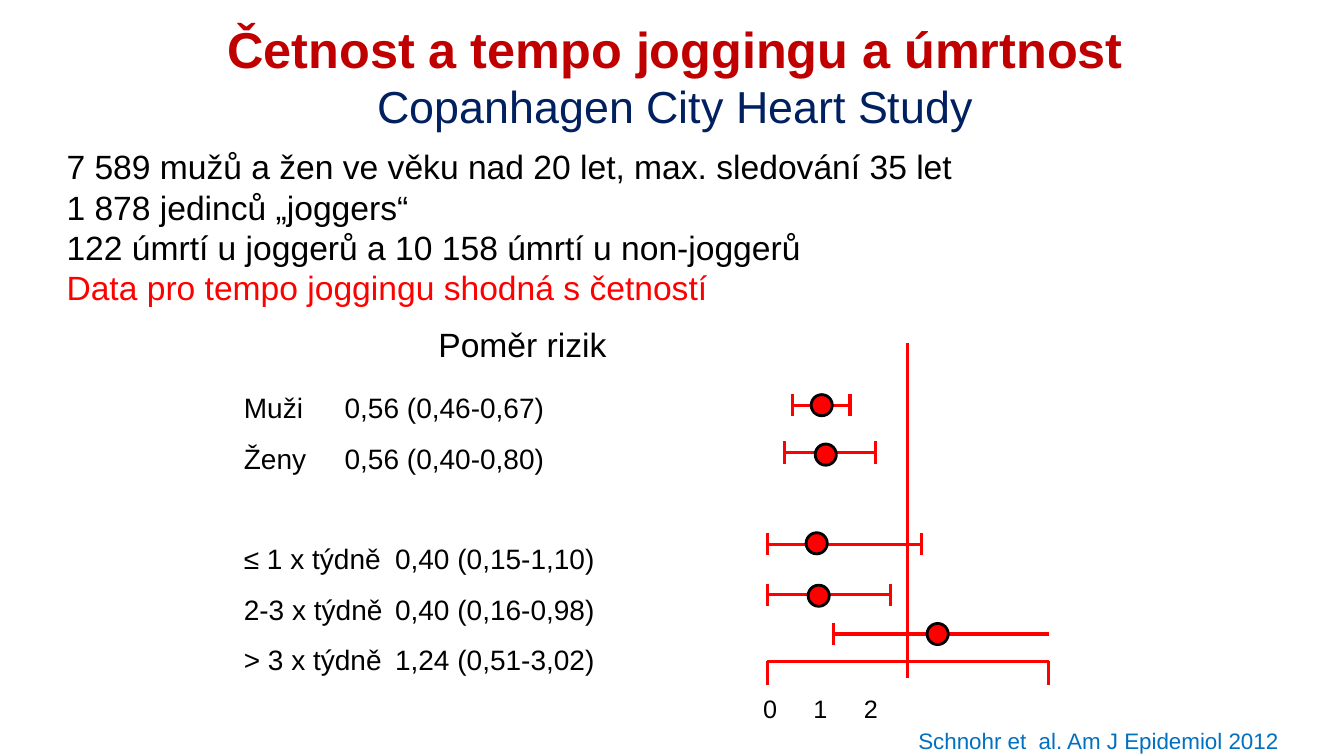
from lxml import etree
from pptx import Presentation
from pptx import util as u
from pptx.dml.color import RGBColor
from pptx.enum import shapes, text
from pptx.oxml import ns

COLOURS = {"title": "C00000", "subtitle": "002060", "body": "000000",
           "accent": "FF0000", "source": "0070C0"}
FONT = "Arial"

FACTS = [
    ("7 589 mužů a žen ve věku nad 20 let, max. sledování 35 let", "body"),
    ("1 878 jedinců „joggers“", "body"),
    ("122 úmrtí u joggerů a 10 158 úmrtí u non-joggerů", "body"),
    ("Data pro tempo joggingu shodná s četností", "accent"),
]
# label, risk ratio, space before in points
RISKS = [
    ("Muži", "0,56 (0,46-0,67)", 0),
    ("Ženy", "0,56 (0,40-0,80)", 0),
    ("≤ 1 x týdně", "0,40 (0,15-1,10)", 36),
    ("2-3 x týdně", "0,40 (0,16-0,98)", 0),
    ("> 3 x týdně", "1,24 (0,51-3,02)", 0),
]
# bar start, bar end, bar height, dot centre x and y, capped at the right end
INTERVALS = [
    (0.25, 0.82, 0.62, 0.54, 0.62, True),
    (0.17, 1.07, 1.09, 0.58, 1.11, True),
    (0, 1.53, 2.00, 0.49, 1.99, True),
    (0, 1.22, 2.50, 0.51, 2.51, True),
    (0.66, 2.79, 2.89, 1.69, 2.89, False),
]
AXIS_WIDTH, AXIS_Y = 2.79, 3.16
CAP, DOT = 0.11, 0.21


def colour(name):
    return RGBColor.from_string(COLOURS[name])


def place(shape, left, top, width, height):
    shape.left, shape.top = u.Inches(left), u.Inches(top)
    shape.width, shape.height = u.Inches(width), u.Inches(height)


def add_span(para, words, size, ink="body", bold=False):
    span = para.add_run()
    span.text = words
    span.font.name, span.font.size, span.font.bold = FONT, u.Pt(size), bold
    span.font.color.rgb = colour(ink)


def write(frame, words, size, ink="body", first=False, before=0, spacing=1.0, tabs=()):
    """Add one unbulleted paragraph with its tab stops in inches."""
    para = frame.paragraphs[0] if first else frame.add_paragraph()
    props = para._p.get_or_add_pPr()
    props.set("marL", "0")
    props.set("indent", "0")
    etree.SubElement(props, ns.qn("a:buNone"))
    if tabs:
        stops = etree.SubElement(props, ns.qn("a:tabLst"))
        for stop in tabs:
            etree.SubElement(stops, ns.qn("a:tab"), pos=str(u.Inches(stop)), algn="l")
    para.space_before, para.line_spacing = u.Pt(before), spacing
    add_span(para, words, size, ink)


def add_box(page, left, top, width, height):
    frame = page.shapes.add_textbox(*map(u.Inches, (left, top, width, height))).text_frame
    frame.word_wrap = True
    return frame


def add_label(page, box, words, size, **form):
    write(add_box(page, *box), words, size, first=True, **form)


def add_line(parent, x1, y1, x2, y2):
    line = parent.shapes.add_connector(shapes.MSO_CONNECTOR.STRAIGHT,
                                       *map(u.Inches, (x1, y1, x2, y2)))
    line.line.color.rgb, line.line.width = colour("accent"), u.Pt(2.25)
    etree.SubElement(line._element.spPr, ns.qn("a:effectLst"))


def fill_title(page, *box):
    title = page.shapes.title
    place(title, *box)
    frame = title.text_frame
    frame.auto_size = text.MSO_AUTO_SIZE.NONE
    frame.vertical_anchor = text.MSO_ANCHOR.MIDDLE
    para = frame.paragraphs[0]
    para.alignment = text.PP_ALIGN.CENTER
    add_span(para, "Četnost a tempo joggingu a úmrtnost", 36, "title", bold=True)
    para.add_line_break()
    add_span(para, "Copanhagen City Heart Study", 32, "subtitle")


def fill_facts(page, *box):
    body = page.placeholders[1]
    place(body, *box)
    body.text_frame.auto_size = text.MSO_AUTO_SIZE.NONE
    for index, (words, ink) in enumerate(FACTS):
        write(body.text_frame, words, 24, ink, first=index == 0)


def add_risks(page, *box):
    frame = add_box(page, *box)
    for index, (label, ratio, before) in enumerate(RISKS):
        write(frame, f"{label}\t{ratio}", 20, first=index == 0,
              before=before, spacing=1.5, tabs=[2])


def add_interval(page, left, right, y, capped):
    bar = page.shapes.add_group_shape()
    add_line(bar, left, y, right, y)
    for x in (left, right) if capped else (left,):
        add_line(bar, x, y - CAP, x, y + CAP)


def add_dot(page, x, y):
    dot = page.shapes.add_shape(shapes.MSO_SHAPE.OVAL, *map(
        u.Inches, (x - DOT / 2, y - DOT / 2, DOT, DOT)))
    dot.shadow.inherit = False
    dot.fill.solid()
    dot.fill.fore_color.rgb = colour("accent")
    dot.line.color.rgb, dot.line.width = colour("body"), u.Pt(2)


def add_forest_plot(page, left, top):
    axis, middle, right = top + AXIS_Y, left + AXIS_WIDTH / 2, left + AXIS_WIDTH
    add_line(page, middle, top, middle, axis)
    scale = page.shapes.add_group_shape()
    add_line(scale, left, axis, right, axis)
    for x, length in ((left, 0.24), (middle, 0.17), (right, 0.24)):
        add_line(scale, x, axis, x, axis + length)
    for start, end, y, dot_x, dot_y, capped in INTERVALS:
        add_interval(page, left + start, left + end, top + y, capped)
        add_dot(page, left + dot_x, top + dot_y)
    add_label(page, (left - 0.14, axis + 0.27, 3.27, 0.4), "0\t1\t2", 18,
              tabs=[1.37, 2.74])


def main():
    deck = Presentation()
    deck.slide_width, deck.slide_height = u.Inches(13.33), u.Inches(7.5)
    page = deck.slides.add_slide(deck.slide_layouts[1])
    fill_title(page, 1.96, 0.12, 9.48, 1.25)
    fill_facts(page, 0.56, 1.4, 12.21, 1.72)
    add_label(page, (4.25, 3.16, 2.1, 0.5), "Poměr rizik", 24)
    add_risks(page, 2.32, 3.66, 4.37, 3.13)
    add_forest_plot(page, 7.61, 3.4)
    add_label(page, (9.01, 7.16, 3.9, 0.37), "Schnohr et  al. Am J Epidemiol 2012", 16,
              ink="source")
    deck.save("out.pptx")


if __name__ == "__main__":
    main()
